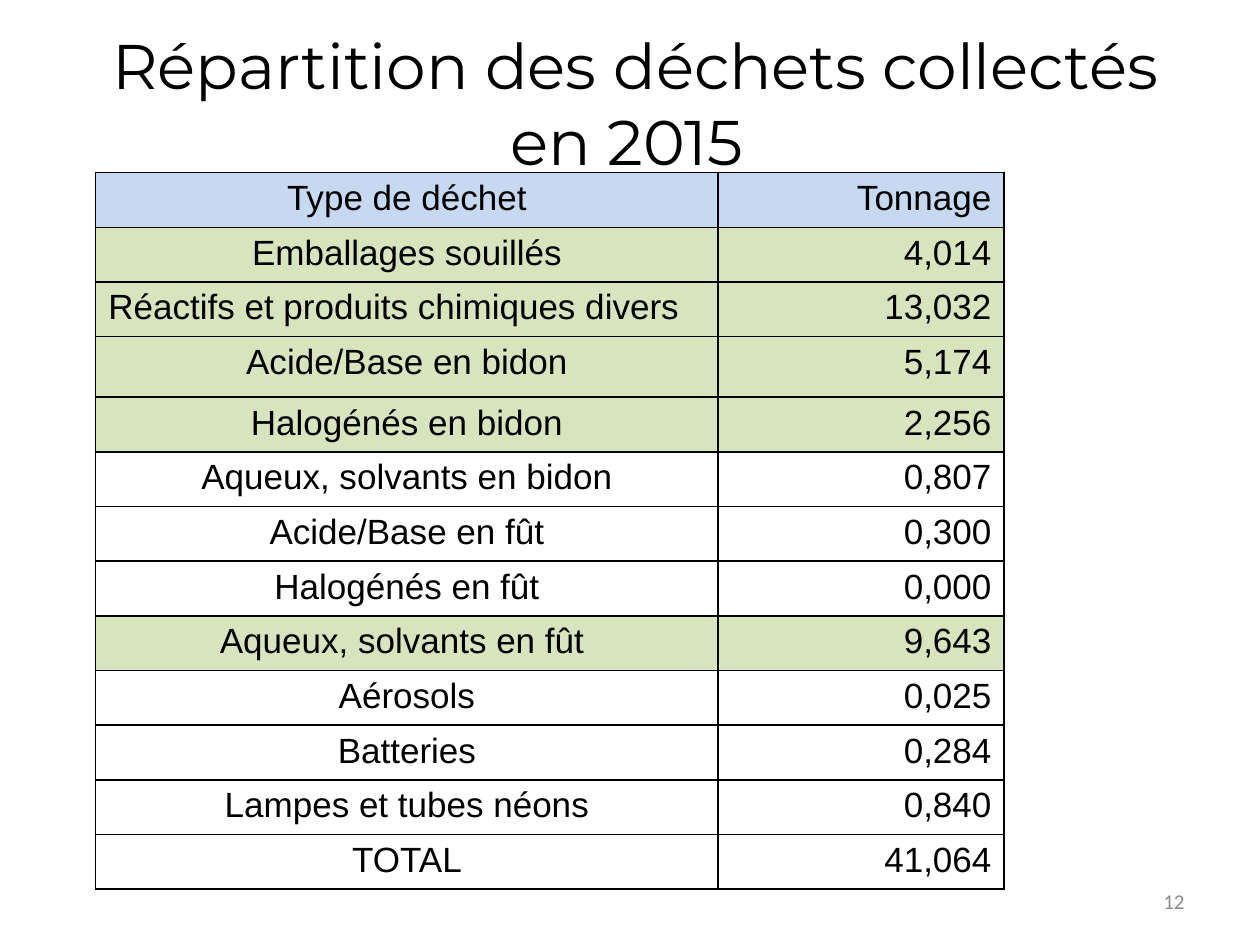
from dataclasses import dataclass

from lxml import etree
from pptx import Presentation
from pptx import util as u
from pptx.dml.color import RGBColor
from pptx.enum import text
from pptx.oxml.ns import qn

CENTER, LEFT, RIGHT = text.PP_ALIGN.CENTER, text.PP_ALIGN.LEFT, text.PP_ALIGN.RIGHT


@dataclass(frozen=True)
class Theme:
    ink: str = "000000"
    muted: str = "8C8C8C"
    header_fill: str = "C6D9F1"
    major_fill: str = "D7E4BD"
    title_font: str = "Montserrat"
    table_font: str = "Arial"
    number_font: str = "Calibri"
    title_size: int = 36
    table_size: int = 20
    number_size: int = 12


def write(frame, words, *, font, size, color, align=LEFT, anchor=text.MSO_ANCHOR.TOP):
    """Put one formatted paragraph in a text frame."""
    frame.word_wrap = True
    frame.vertical_anchor = anchor
    paragraph = frame.paragraphs[0]
    paragraph.alignment = align
    run = paragraph.add_run()
    run.text = words
    run.font.name = font
    run.font.size = u.Pt(size)
    run.font.color.rgb = RGBColor.from_string(color)


def outline(cell, color, width=1):
    """Draw the four borders of a cell; they must come before its fill."""
    properties = cell._tc.get_or_add_tcPr()
    for side in ("a:lnL", "a:lnR", "a:lnT", "a:lnB"):
        line = etree.SubElement(properties, qn(side), w=str(u.Pt(width)))
        fill = etree.SubElement(line, qn("a:solidFill"))
        etree.SubElement(fill, qn("a:srgbClr"), val=color)


class SlideBuilder:
    def __init__(self, slide, theme):
        self.slide = slide
        self.theme = theme

    def title(self, words, left, top, width, height):
        heading = self.slide.shapes.title
        heading.left, heading.top = u.Inches(left), u.Inches(top)
        heading.width, heading.height = u.Inches(width), u.Inches(height)
        heading.text_frame.auto_size = text.MSO_AUTO_SIZE.NONE
        write(heading.text_frame, words, font=self.theme.title_font,
              size=self.theme.title_size, color=self.theme.ink, align=CENTER)

    def table(self, rows, left, top, columns, heights):
        frame = self.slide.shapes.add_table(
            len(rows), len(columns), u.Inches(left), u.Inches(top),
            u.Inches(sum(columns)), u.Inches(sum(heights)))
        grid = frame.table
        grid.horz_banding = False
        for column, width in zip(grid.columns, columns):
            column.width = u.Inches(width)
        for row, height, (label, tonnage, fill, align) in zip(grid.rows, heights, rows):
            row.height = u.Inches(height)
            self.cell(row.cells[0], label, fill, align)
            self.cell(row.cells[1], tonnage, fill, RIGHT)

    def cell(self, cell, words, fill, align):
        outline(cell, self.theme.ink)
        if fill:
            cell.fill.solid()
            cell.fill.fore_color.rgb = RGBColor.from_string(fill)
        else:
            cell.fill.background()
        write(cell.text_frame, words, font=self.theme.table_font,
              size=self.theme.table_size, color=self.theme.ink, align=align)

    def page_number(self, number, left, top, width, height):
        box = self.slide.shapes.add_textbox(
            u.Inches(left), u.Inches(top), u.Inches(width), u.Inches(height))
        write(box.text_frame, number, font=self.theme.number_font,
              size=self.theme.number_size, color=self.theme.muted,
              align=RIGHT, anchor=text.MSO_ANCHOR.MIDDLE)


def main():
    theme = Theme()
    deck = Presentation()
    deck.slide_width, deck.slide_height = u.Inches(10), u.Inches(7.5)
    builder = SlideBuilder(deck.slides.add_slide(deck.slide_layouts[5]), theme)

    # Title
    builder.title("Répartition des déchets collectés en 2015 ", 0.44, 0.16, 9.2, 2.93)

    # Waste table: label, tonnage, fill, label alignment
    major = theme.major_fill
    waste = [
        ("Type de déchet", "Tonnage", theme.header_fill, CENTER),
        ("Emballages souillés", "4,014", major, CENTER),
        ("Réactifs et produits chimiques divers", "13,032", major, LEFT),
        ("Acide/Base en bidon", "5,174", major, CENTER),
        ("Halogénés en bidon", "2,256", major, CENTER),
        ("Aqueux, solvants en bidon", "0,807", None, CENTER),
        ("Acide/Base en fût", "0,300", None, CENTER),
        ("Halogénés en fût", "0,000", None, CENTER),
        ("Aqueux, solvants en fût ", "9,643", major, CENTER),
        ("Aérosols", "0,025", None, CENTER),
        ("Batteries", "0,284", None, CENTER),
        ("Lampes et tubes néons", "0,840", None, CENTER),
        ("TOTAL", "41,064", None, CENTER),
    ]
    # One taller row; the others share the remaining height
    table_height, tall_row, tall_index = 5.69, 0.48, 3
    heights = [(table_height - tall_row) / (len(waste) - 1)] * len(waste)
    heights[tall_index] = tall_row
    builder.table(waste, 0.76, 1.37, [4.94, 2.27], heights)

    # Page number
    builder.page_number("12", 7.17, 6.95, 2.33, 0.4)

    deck.save("out.pptx")


if __name__ == "__main__":
    main()
